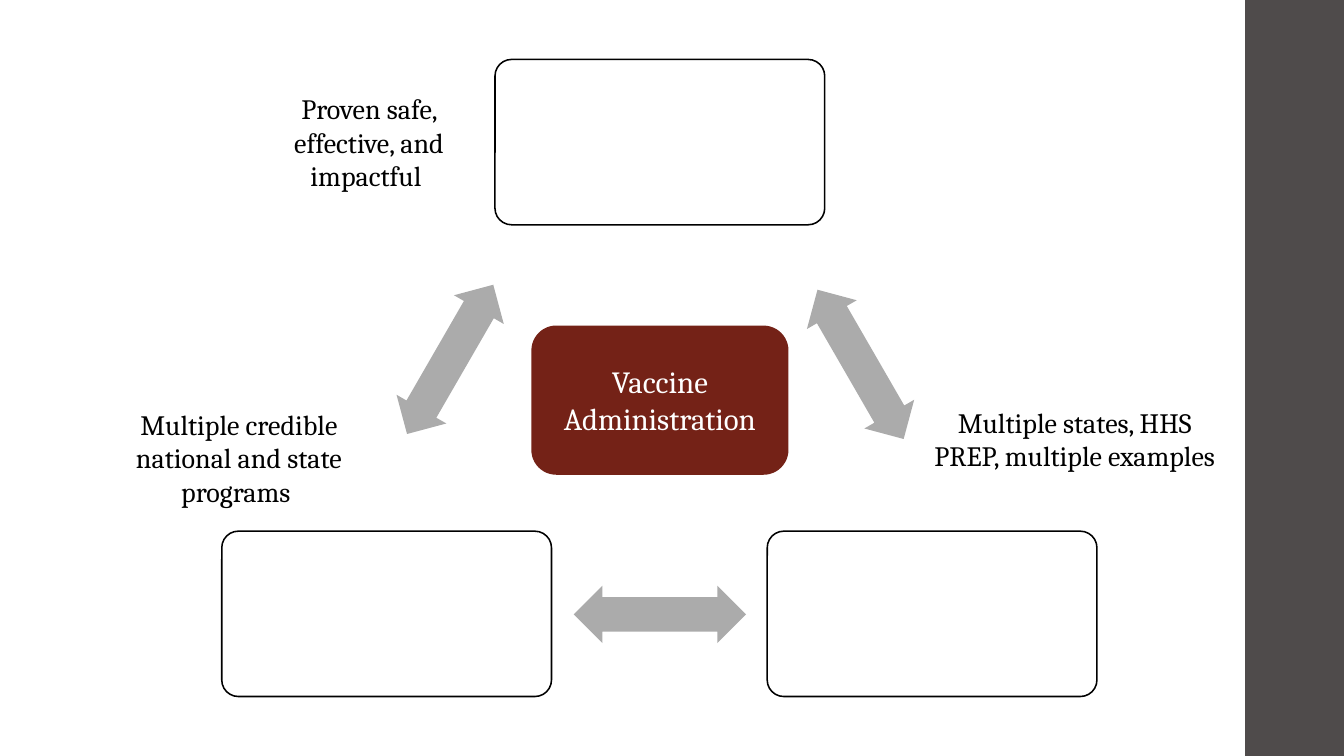
"""Build a slide of three linked boxes around vaccine administration."""
from typing import NamedTuple, Optional

from pptx import Presentation
from pptx.dml.color import RGBColor
from pptx.enum import shapes as sh, text as tx
from pptx.util import Inches, Pt

HUES = {"bar": "4F4B4B", "box": "FFFFFF", "edge": "000000", "arrow": "ABABAB",
        "hub": "742217", "light": "FFFFFF", "dark": "000000"}
FONT = "Cambria"
KIND = sh.MSO_SHAPE


class Spot(NamedTuple):
    left: float
    top: float
    turn: float = 0


class Note(NamedTuple):
    left: float
    top: float
    width: float
    words: str


BOXES = [Spot(4.91, 0.59), Spot(7.61, 5.27), Spot(2.2, 5.27)]
ARROWS = [Spot(7.68, 3.33, 60), Spot(5.69, 5.81, 180), Spot(3.61, 3.28, 300)]
NOTES = [
    Note(2.37, 0.86, 2.58, "Proven safe, effective, and impactful "),
    Note(1.08, 3.99, 2.58, "Multiple credible national and state programs "),
    Note(9.06, 3.97, 3.2, "Multiple states, HHS PREP, multiple examples"),
]


def hue(name: str) -> RGBColor:
    return RGBColor.from_string(HUES[name])


def draw(slide, kind: KIND, spot: Spot, width: float, height: float, fill: str,
         edge: Optional[str] = None, bends: tuple = ()):
    shape = slide.shapes.add_shape(kind, Inches(spot.left), Inches(spot.top),
                                   Inches(width), Inches(height))
    shape.shadow.inherit = False
    shape.rotation = spot.turn
    for place, bend in enumerate(bends):
        shape.adjustments[place] = bend
    shape.fill.solid()
    shape.fill.fore_color.rgb = hue(fill)
    if edge:
        shape.line.color.rgb = hue(edge)
        shape.line.width = Pt(1.1)
    else:
        shape.line.fill.background()
    return shape


def write(frame, words: str, size: int, color: str) -> None:
    frame.word_wrap = True
    para = frame.paragraphs[0]
    para.alignment = tx.PP_ALIGN.CENTER
    run = para.add_run()
    run.text = words
    run.font.name = FONT
    run.font.size = Pt(size)
    run.font.color.rgb = hue(color)


def main() -> None:
    deck = Presentation()
    deck.slide_width, deck.slide_height = Inches(13.33), Inches(7.5)
    slide = deck.slides.add_slide(deck.slide_layouts[6])
    draw(slide, KIND.RECTANGLE, Spot(12.35, 0), 0.98, 7.5, "bar")
    for box, arrow in zip(BOXES, ARROWS):
        draw(slide, KIND.ROUNDED_RECTANGLE, box, 3.27, 1.64, "box", "edge", (0.1,))
        draw(slide, KIND.LEFT_RIGHT_ARROW, arrow, 1.71, 0.57, "arrow", bends=(0.6, 0.5))
    hub = draw(slide, KIND.ROUNDED_RECTANGLE, Spot(5.27, 3.23), 2.55, 1.48, "hub")
    hub.text_frame.vertical_anchor = tx.MSO_ANCHOR.MIDDLE
    write(hub.text_frame, "Vaccine Administration", 22, "light")
    for note in NOTES:
        area = slide.shapes.add_textbox(Inches(note.left), Inches(note.top),
                                        Inches(note.width), Inches(1.11))
        write(area.text_frame, note.words, 20, "dark")
        area.text_frame.auto_size = tx.MSO_AUTO_SIZE.SHAPE_TO_FIT_TEXT
    deck.save("out.pptx")


if __name__ == "__main__":
    main()
